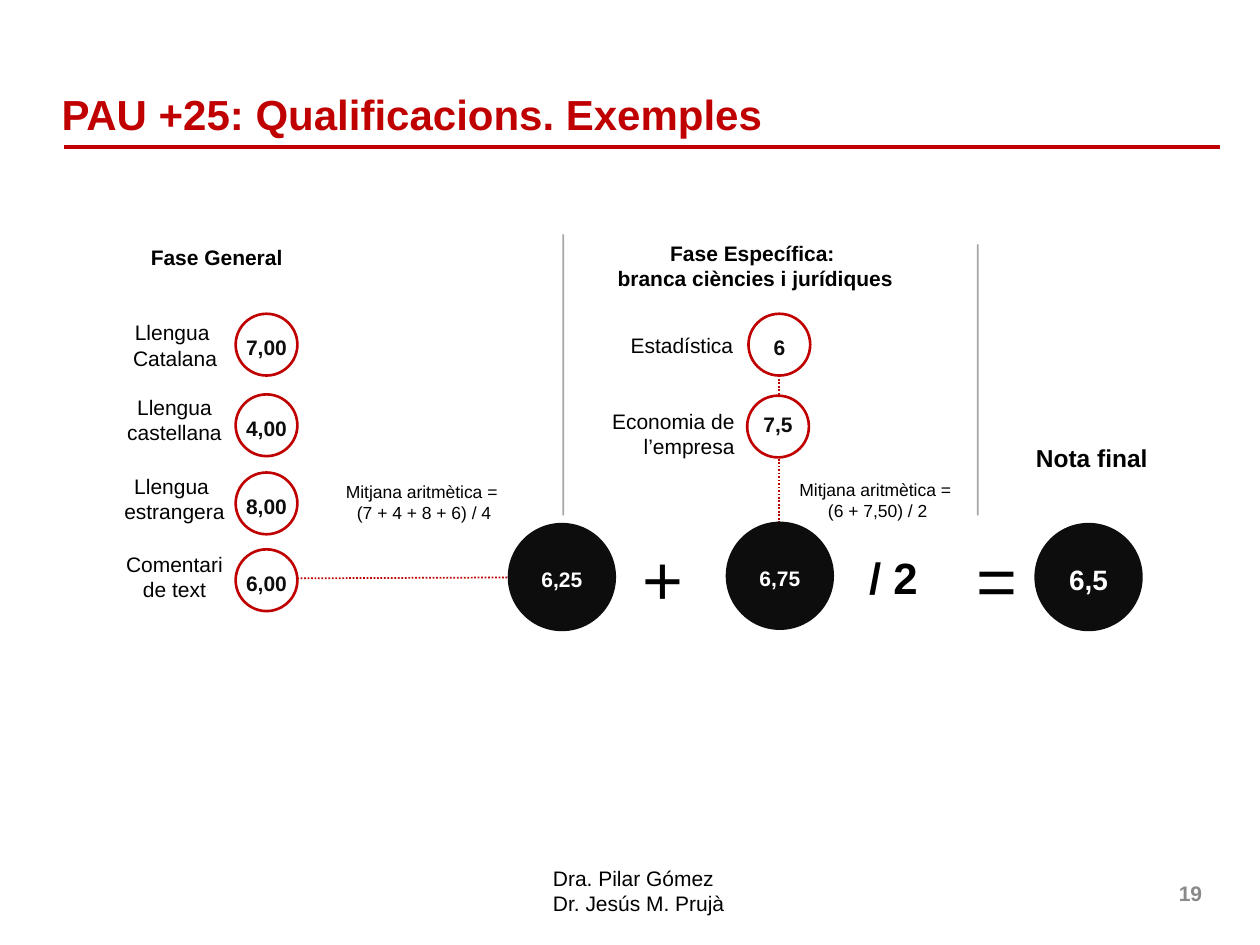
from lxml.etree import SubElement
from pptx import Presentation
from pptx.dml.color import RGBColor
from pptx.enum.dml import MSO_LINE
from pptx.enum.shapes import MSO_CONNECTOR, MSO_SHAPE
from pptx.enum.text import MSO_ANCHOR, PP_ALIGN
from pptx.oxml.ns import qn
from pptx.util import Inches, Pt

COLORS = {
    "red": "C00000",
    "black": "000000",
    "ink": "0D0D0D",
    "white": "FFFFFF",
    "grey": "898989",
}
LEFT, CENTER, RIGHT = PP_ALIGN.LEFT, PP_ALIGN.CENTER, PP_ALIGN.RIGHT
SMALL, LARGE = 0.49, 0.86
GENERAL_X, SPECIFIC_X = 1.87, 5.94
LABEL_DROP = 0.02


def color(name):
    return RGBColor.from_string(COLORS[name])


def add_text(page, text, left, top, width, height, size=12, ink="black", bold=False,
             align=LEFT, anchor=MSO_ANCHOR.TOP, wrap=True, inset=True):
    box = page.shapes.add_textbox(Inches(left), Inches(top), Inches(width), Inches(height))
    frame = box.text_frame
    frame.word_wrap = wrap
    frame.vertical_anchor = anchor
    if not inset:
        frame.margin_left = frame.margin_right = 0
        frame.margin_top = frame.margin_bottom = 0
    frame.text = text
    for para in frame.paragraphs:
        para.alignment = align
        for span in para.runs:
            span.font.name = "Arial"
            span.font.size = Pt(size)
            span.font.bold = bold
            span.font.color.rgb = color(ink)
    for line_break in box.element.iter(qn("a:br")):
        SubElement(line_break, qn("a:rPr"), sz=str(size * 100))


def add_line(page, x1, y1, x2, y2, ink, width=1, dotted=False, opacity=None):
    line = page.shapes.add_connector(
        MSO_CONNECTOR.STRAIGHT, Inches(x1), Inches(y1), Inches(x2), Inches(y2))
    line.line.color.rgb = color(ink)
    line.line.width = Pt(width)
    if dotted:
        line.line.dash_style = MSO_LINE.ROUND_DOT
    properties = line.element.spPr
    if opacity:
        rgb = next(properties.iter(qn("a:srgbClr")))
        SubElement(rgb, qn("a:alpha"), val=str(opacity * 1000))
    SubElement(properties, qn("a:effectLst"))


def add_circle(page, left, top, diameter):
    circle = page.shapes.add_shape(
        MSO_SHAPE.OVAL, Inches(left), Inches(top), Inches(diameter), Inches(diameter))
    circle.shadow.inherit = False
    circle.fill.solid()
    return circle


def add_circle_label(page, text, left, top, diameter, size, ink, drop):
    height = size / 60
    add_text(page, text, left, top + (diameter - height) / 2 + drop, diameter, height,
             size, ink, True, CENTER, MSO_ANCHOR.MIDDLE, inset=False)


def add_mark(page, text, left, top, drop=LABEL_DROP):
    circle = add_circle(page, left, top, SMALL)
    circle.fill.fore_color.rgb = color("white")
    circle.line.color.rgb = color("red")
    circle.line.width = Pt(1.5)
    add_circle_label(page, text, left, top, SMALL, 12, "ink", drop)


def add_result(page, text, left, top, size=12):
    circle = add_circle(page, left, top, LARGE)
    circle.fill.fore_color.rgb = color("ink")
    circle.line.fill.background()
    add_circle_label(page, text, left, top, LARGE, size, "white", LABEL_DROP)


def add_frame(page):
    add_line(page, 0.51, 1.17, 9.68, 1.17, "red", 2.25)
    add_text(page, "PAU +25: Qualificacions. Exemples", 0.39, 0.63, 9.37, 0.55,
             24, "red", True, anchor=MSO_ANCHOR.MIDDLE)
    add_text(page, "Dra. Pilar Gómez\nDr. Jesús M. Prujà", 4.29, 6.82, 1.57, 0.51)
    add_text(page, "19", 7.31, 6.89, 2.33, 0.4, 12, "grey", True, RIGHT, MSO_ANCHOR.MIDDLE)


def add_general_phase(page):
    add_text(page, "Fase General", 1.09, 1.89, 1.26, 0.3,
             bold=True, align=CENTER, wrap=False)
    subjects = [
        ("Llengua \nCatalana", 0.72, 2.49, 1.34, "7,00", 2.49),
        ("Llengua\ncastellana", 0.51, 3.08, 1.75, "4,00", 3.13),
        ("Llengua \nestrangera", 0.51, 3.71, 1.75, "8,00", 3.75),
        ("Comentari\nde text", 0.51, 4.33, 1.75, "6,00", 4.36),
    ]
    for name, left, top, width, mark, mark_top in subjects:
        add_text(page, name, left, top, width, 0.5, align=CENTER)
        add_mark(page, mark, GENERAL_X, mark_top)
    add_text(page, "Mitjana aritmètica = \v(7 + 4 + 8 + 6) / 4", 2.34, 3.77, 2.05, 0.44,
             10, align=CENTER)


def add_specific_phase(page):
    add_text(page, "Fase Específica: \nbranca ciències i jurídiques", 4.79, 1.86, 2.41, 0.5,
             bold=True, align=CENTER, wrap=False)
    add_text(page, "Estadística", 4.85, 2.64, 0.97, 0.17, align=RIGHT, inset=False)
    add_text(page, "Economia de l’empresa", 4.72, 3.24, 1.11, 0.37, align=RIGHT, inset=False)
    add_mark(page, "6", SPECIFIC_X, 2.49)
    add_mark(page, "7,5", SPECIFIC_X - 0.01, 3.14, -LABEL_DROP)
    add_text(page, "Mitjana aritmètica = \v(6 + 7,50) / 2", 5.94, 3.75, 2.05, 0.44,
             10, align=CENTER)


def add_final_mark(page):
    add_result(page, "6,25", 4.03, 4.15)
    add_text(page, "+", 5, 4.2, 0.53, 0.77, 40, wrap=False)
    add_result(page, "6,75", 5.76, 4.14)
    add_text(page, "/ 2", 6.8, 4.32, 0.59, 0.52, 25, bold=True, wrap=False)
    add_text(page, "=", 7.65, 4.21, 0.53, 0.77, 40, wrap=False)
    add_result(page, "6,5", 8.21, 4.15, 16)
    add_text(page, "Nota final", 8.12, 3.47, 1.09, 0.34, 14,
             bold=True, align=CENTER, wrap=False)


def main():
    deck = Presentation()
    deck.slide_width, deck.slide_height = Inches(10), Inches(7.5)
    page = deck.slides.add_slide(deck.slide_layouts[6])
    add_frame(page)
    add_line(page, 6.18, 2.98, 6.18, 4.29, "red", dotted=True)
    add_line(page, 4.88, 4.58, 2.36, 4.59, "red", dotted=True)
    add_line(page, 4.47, 1.86, 4.47, 4.09, "black", opacity=35)
    add_line(page, 7.76, 1.94, 7.76, 4.09, "black", opacity=35)
    add_general_phase(page)
    add_specific_phase(page)
    add_final_mark(page)
    deck.save("out.pptx")


if __name__ == "__main__":
    main()
